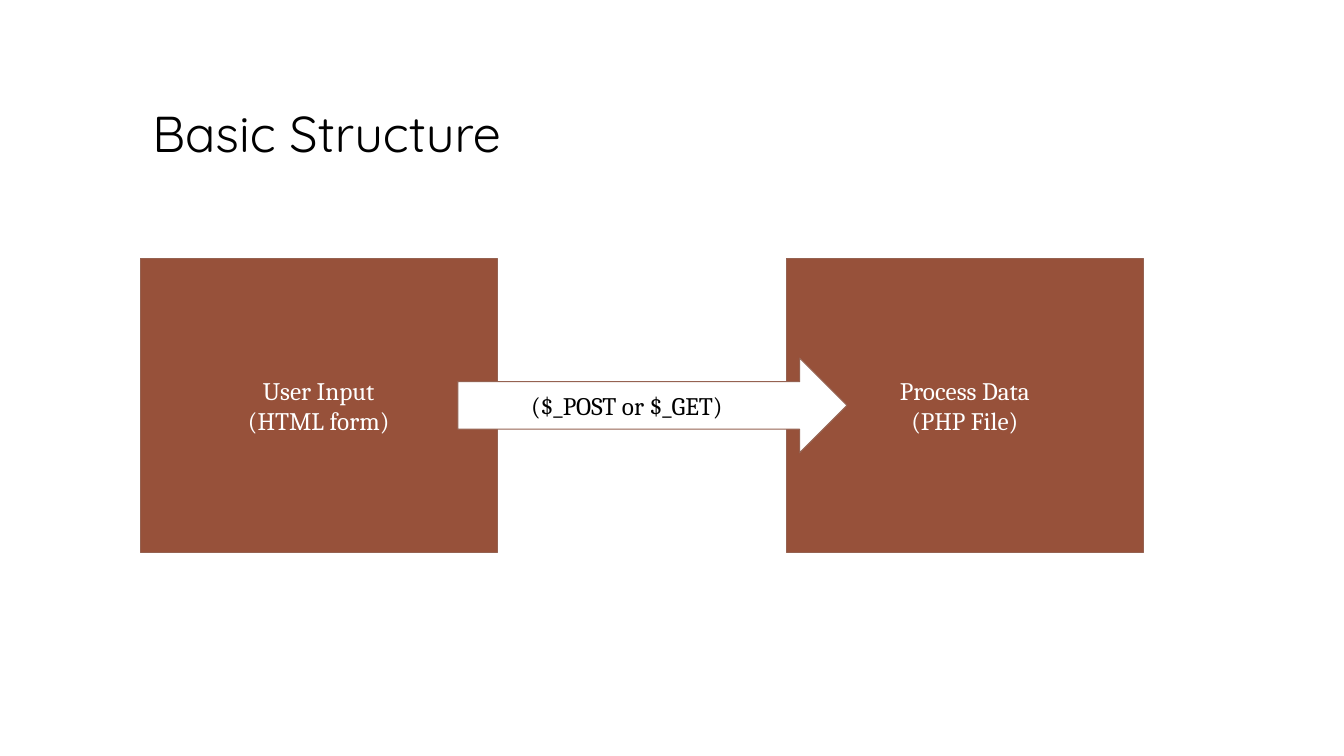
from pptx import Presentation, util as u
from pptx.dml.color import RGBColor
from pptx.enum import shapes, text

WHITE = RGBColor(0xFF, 0xFF, 0xFF)
BLACK = RGBColor(0x00, 0x00, 0x00)
RUST = RGBColor(0x97, 0x51, 0x3A)
OUTLINE = RGBColor(0x95, 0x62, 0x51)

MIDDLE = 53.63  # shared centre line of the flow, in percent of the height
BOX_WIDTH, BOX_HEIGHT = 26.56, 38.8


class FlowSlide:
    """Places elements by percent of the slide's width and height."""

    title_font, body_font = "Quicksand", "Cambria"
    title_size, body_size = u.Pt(36), u.Pt(18)

    def __init__(self, presentation):
        self.width = presentation.slide_width
        self.height = presentation.slide_height
        self.slide = presentation.slides.add_slide(presentation.slide_layouts[5])

    def area(self, left, top, width, height):
        return (int(self.width * left / 100), int(self.height * top / 100),
                int(self.width * width / 100), int(self.height * height / 100))

    def centred_area(self, left, width, height):
        """Area whose vertical centre lies on the flow's centre line."""
        return self.area(left, MIDDLE - height / 2, width, height)

    def set_text(self, shape, lines, font, size, color, alignment, anchor):
        frame = shape.text_frame
        frame.text = "\n".join(lines)
        frame.vertical_anchor = anchor
        for paragraph in frame.paragraphs:
            paragraph.alignment = alignment
            for run in paragraph.runs:
                run.font.name = font
                run.font.size = size
                run.font.color.rgb = color

    def title(self, words, left, top, width, height):
        title = self.slide.shapes.title
        title.left, title.top, title.width, title.height = self.area(
            left, top, width, height)
        self.set_text(title, [words], self.title_font, self.title_size, BLACK,
                      text.PP_ALIGN.LEFT, text.MSO_ANCHOR.BOTTOM)
        title.text_frame.paragraphs[0].line_spacing = 0.9

    def shape(self, kind, fill, left, width, height):
        shape = self.slide.shapes.add_shape(
            kind, *self.centred_area(left, width, height))
        shape.shadow.inherit = False
        shape.fill.solid()
        shape.fill.fore_color.rgb = fill
        shape.line.color.rgb = OUTLINE
        shape.line.width = u.Pt(0.75)
        return shape

    def box(self, lines, left):
        box = self.shape(shapes.MSO_SHAPE.RECTANGLE, RUST, left, BOX_WIDTH, BOX_HEIGHT)
        self.set_text(box, lines, self.body_font, self.body_size, WHITE,
                      text.PP_ALIGN.CENTER, text.MSO_ANCHOR.MIDDLE)

    def arrow(self, left, width, height):
        self.shape(shapes.MSO_SHAPE.RIGHT_ARROW, WHITE, left, width, height)

    def label(self, words, left, width, height):
        label = self.slide.shapes.add_textbox(*self.centred_area(left, width, height))
        self.set_text(label, [words], self.body_font, self.body_size, BLACK,
                      text.PP_ALIGN.LEFT, text.MSO_ANCHOR.MIDDLE)
        label.text_frame.word_wrap = True


def main():
    presentation = Presentation()
    presentation.slide_width = u.Inches(13.33)
    presentation.slide_height = u.Inches(7.5)

    flow = FlowSlide(presentation)
    flow.title("Basic Structure", 10.58, 5.6, 78.77, 16.67)
    flow.box(["User Input", "(HTML form)"], 10.43)
    flow.box(["Process Data", "(PHP File)"], 58.51)
    flow.arrow(34.06, 28.96, 12.53)
    flow.label("($_POST or $_GET)", 38.78, 17.85, 5.33)

    presentation.save("out.pptx")


if __name__ == "__main__":
    main()
